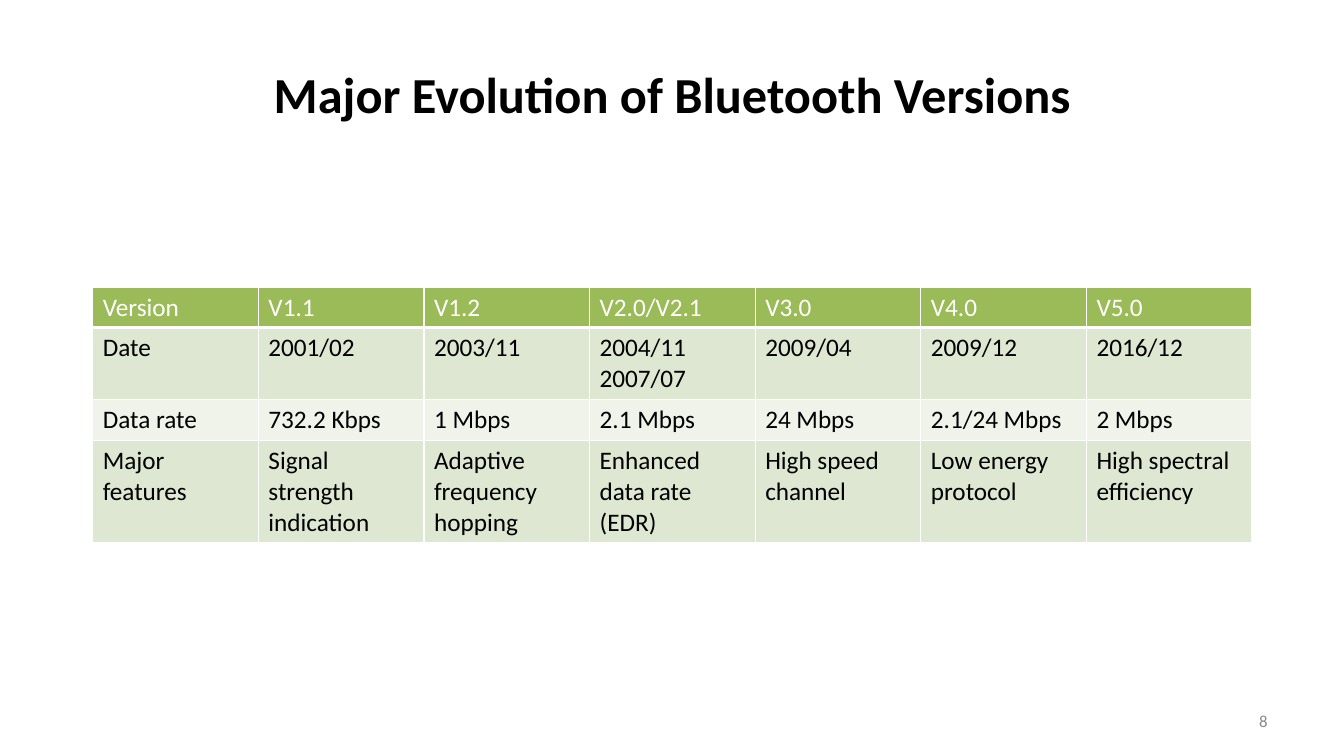
from dataclasses import dataclass

from lxml.etree import SubElement as Sub
from pptx import Presentation as Deck
from pptx.dml.color import RGBColor as Rgb
from pptx.enum.text import MSO_ANCHOR as Anchor, PP_ALIGN as Align
from pptx.oxml.ns import qn
from pptx.slide import Slide
from pptx.table import _Cell as Cell
from pptx.text.text import _Paragraph as Para
from pptx.util import Emu, Pt


@dataclass(frozen=True)
class Theme:
    font: str = "Calibri"
    black: str = "000000"
    white: str = "FFFFFF"
    gray: str = "898989"
    green: str = "9BBB59"
    bands: tuple[str, str] = ("DEE7D1", "EFF3EA")
    title: int = 36
    body: int = 18
    note: int = 12
    thin: int = 1
    thick: int = 3


@dataclass(frozen=True)
class Label:
    text: str
    box: tuple[int, int, int, int]
    size: int
    color: str
    align: Align
    bold: bool = False


@dataclass(frozen=True)
class Row:
    height: int
    cells: tuple[str, ...]


THEME = Theme()
SCALE = 9144

LABELS = (
    Label("Major Evolution of Bluetooth Versions", (67, 30, 1200, 125),
          THEME.title, THEME.black, Align.CENTER, True),
    Label("8", (956, 695, 311, 40), THEME.note, THEME.gray, Align.RIGHT),
)

ROWS = (
    Row(40, ("Version", "V1.1", "V1.2", "V2.0/V2.1", "V3.0", "V4.0", "V5.0")),
    Row(71, ("Date", "2001/02", "2003/11", "2004/11\n2007/07", "2009/04",
             "2009/12", "2016/12")),
    Row(41, ("Data rate", "732.2 Kbps", "1 Mbps", "2.1 Mbps", "24 Mbps",
             "2.1/24 Mbps", "2 Mbps")),
    Row(101, ("Major features", "Signal strength indication",
              "Adaptive frequency hopping", "Enhanced data rate (EDR)",
              "High speed channel", "Low energy protocol",
              "High spectral efficiency")),
)
LEFT, TOP, WIDTH = 92, 285, 1150


def px(count: int) -> Emu:
    return Emu(count * SCALE)


def add_run(para: Para, text: str, size: int, color: str, bold: bool = False) -> None:
    run = para.add_run()
    run.text = text
    run.font.name = THEME.font
    run.font.size = Pt(size)
    run.font.bold = bold
    run.font.color.rgb = Rgb.from_string(color)


def add_label(slide: Slide, label: Label) -> None:
    frame = slide.shapes.add_textbox(*map(px, label.box)).text_frame
    frame.word_wrap = True
    frame.vertical_anchor = Anchor.MIDDLE
    para = frame.paragraphs[0]
    para.alignment = label.align
    add_run(para, label.text, label.size, label.color, label.bold)


def add_edges(cell: Cell, base: int) -> None:
    props = cell._tc.get_or_add_tcPr()
    widths = {"L": THEME.thin, "R": THEME.thin, "T": THEME.thin, "B": base}
    for side, width in widths.items():
        line = Sub(props, qn(f"a:ln{side}"), w=str(Pt(width)))
        fill = Sub(line, qn("a:solidFill"))
        Sub(fill, qn("a:srgbClr"), val=THEME.white)


def fill_cell(cell: Cell, text: str, index: int) -> None:
    head = index == 0
    add_edges(cell, THEME.thick if head else THEME.thin)
    cell.fill.solid()
    back = THEME.green if head else THEME.bands[(index - 1) % 2]
    cell.fill.fore_color.rgb = Rgb.from_string(back)
    frame = cell.text_frame
    for order, line in enumerate(text.split("\n")):
        para = frame.add_paragraph() if order else frame.paragraphs[0]
        add_run(para, line, THEME.body, THEME.white if head else THEME.black)


def add_grid(slide: Slide, rows: tuple[Row, ...]) -> None:
    count = len(rows[0].cells)
    height = sum(row.height for row in rows)
    table = slide.shapes.add_table(
        len(rows), count, px(LEFT), px(TOP), px(WIDTH), px(height)).table
    table.first_row = False
    table.horz_banding = False
    for index, row in enumerate(rows):
        table.rows[index].height = px(row.height)
        for col, text in enumerate(row.cells):
            fill_cell(table.cell(index, col), text, index)


def main() -> None:
    deck = Deck()
    deck.slide_width, deck.slide_height = px(1333), px(750)
    slide = deck.slides.add_slide(deck.slide_layouts[6])
    for label in LABELS:
        add_label(slide, label)
    add_grid(slide, ROWS)
    deck.save("out.pptx")


if __name__ == "__main__":
    main()
